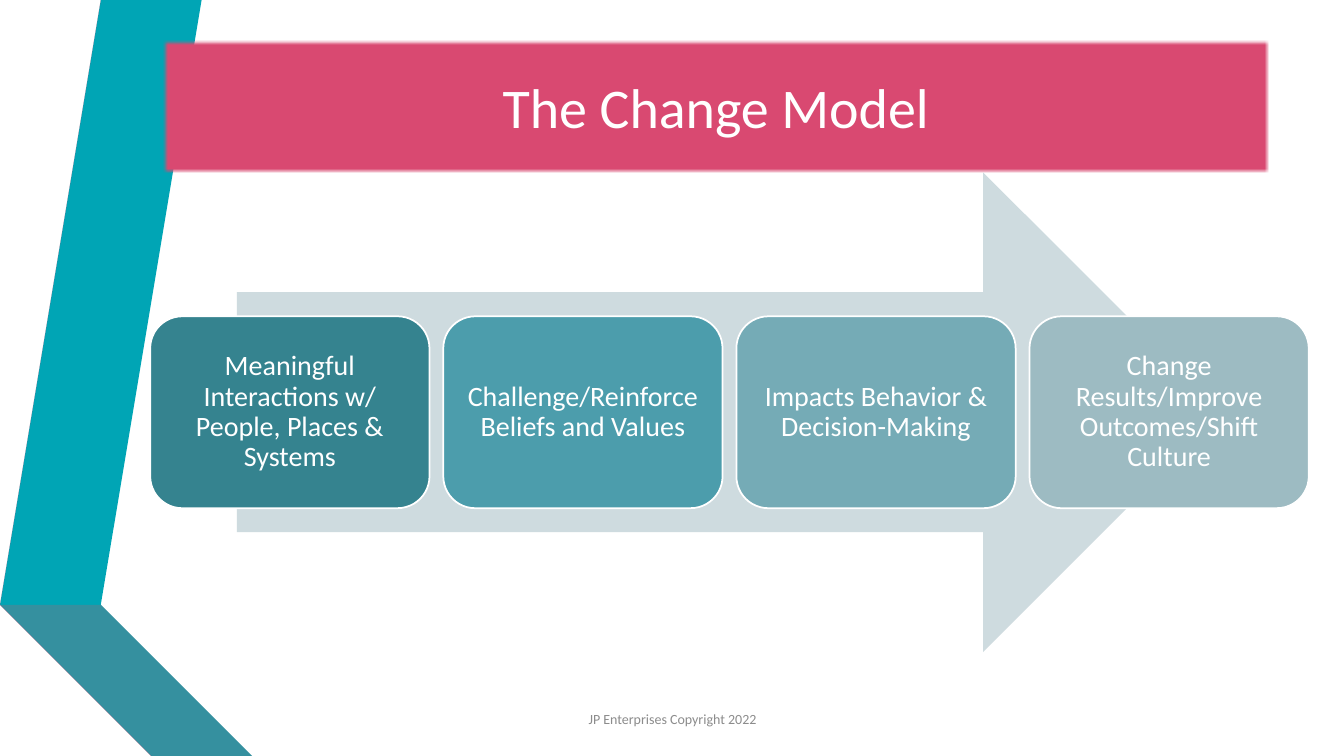
from dataclasses import dataclass

from lxml import etree
from pptx import Presentation
from pptx import util as u
from pptx.dml.color import RGBColor
from pptx.enum import shapes, text
from pptx.oxml import ns

TITLE = "The Change Model"
FOOTER = "JP Enterprises Copyright 2022"
STEPS = [
    ("Meaningful Interactions w/ People, Places & Systems", "35838F"),
    ("Challenge/Reinforce Beliefs and Values", "4C9DAC"),
    ("Impacts Behavior & Decision-Making", "75ABB6"),
    ("Change Results/Improve Outcomes/Shift Culture", "9DBBC2"),
]
RIBBONS = [
    ("00A5B5", [(0.5, 5.78), (0.77, 5.83), (1.73, 0), (1.45, 0)]),
    ("F5416C", [(1.39, 0), (1.11, 0), (0.16, 5.73), (0.44, 5.77)]),
    ("35909F", [(0.5, 5.79), (2.14, 7.5), (2.83, 7.5), (0.77, 5.83), (0.5, 5.78)]),
    ("DB4871", [(2.02, 7.5), (0.48, 5.83), (0.43, 5.77), (0.16, 5.73), (1.51, 7.5)]),
]


@dataclass(frozen=True)
class Theme:
    font: str = "Calibri"
    white: str = "FFFFFF"
    banner: str = "D94971"
    arrow: str = "CEDBDF"
    footer: str = "8C8C8C"
    title_size: int = 40
    step_size: int = 20
    footer_size: int = 10


THEME = Theme()
WIDTH, HEIGHT = 13.33, 7.5
ARROW = (2.35, 1.71, 9.78, 4.76)
STEP_LEFT, STEP_WIDTH, STEP_PITCH = 1.49, 2.77, 2.907
STEP_HEIGHT = ARROW[3] * 0.4
STEP_TOP = ARROW[1] + (ARROW[3] - STEP_HEIGHT) / 2


def paint(shape, color, outline=None):
    shape.shadow.inherit = False
    shape.fill.solid()
    shape.fill.fore_color.rgb = RGBColor.from_string(color)
    if outline:
        shape.line.color.rgb = RGBColor.from_string(outline)
        shape.line.width = u.Pt(1.25)
    else:
        shape.line.fill.background()
    return shape


def add_block(page, kind, frame, color, outline=None):
    shape = page.shapes.add_shape(kind, *map(u.Inches, frame))
    return paint(shape, color, outline)


def write(shape, words, size, color):
    frame = shape.text_frame
    frame.word_wrap = True
    frame.vertical_anchor = text.MSO_ANCHOR.MIDDLE
    para = frame.paragraphs[0]
    para.alignment = text.PP_ALIGN.CENTER
    span = para.add_run()
    span.text = words
    span.font.name = THEME.font
    span.font.size = u.Pt(size)
    span.font.color.rgb = RGBColor.from_string(color)
    return frame


def add_ribbon(page, color, points):
    start, *rest = points
    builder = page.shapes.build_freeform(*start, scale=u.Inches(1))
    builder.add_line_segments(rest, close=True)
    paint(builder.convert_to_shape(), color)


def add_banner(page):
    frame = (1.62, 0.4, 10.96, 1.31)
    banner = add_block(page, shapes.MSO_SHAPE.RECTANGLE, frame, THEME.banner)
    effects = banner._element.spPr.find(ns.qn("a:effectLst"))
    etree.SubElement(effects, ns.qn("a:softEdge"), rad=str(u.Pt(2)))
    write(banner, TITLE, THEME.title_size, THEME.white)


def add_step(page, column, words, color):
    frame = (STEP_LEFT + column * STEP_PITCH, STEP_TOP, STEP_WIDTH, STEP_HEIGHT)
    box = add_block(page, shapes.MSO_SHAPE.ROUNDED_RECTANGLE, frame, color, THEME.white)
    body = write(box, words, THEME.step_size, THEME.white)
    body.margin_left = body.margin_right = u.Inches(0.08)
    body.margin_top = body.margin_bottom = u.Inches(0.08)
    body.paragraphs[0].line_spacing = 0.9


def main():
    deck = Presentation()
    deck.slide_width, deck.slide_height = u.Inches(WIDTH), u.Inches(HEIGHT)
    page = deck.slides.add_slide(deck.slide_layouts[6])
    for color, points in RIBBONS:
        add_ribbon(page, color, points)
    add_banner(page)
    add_block(page, shapes.MSO_SHAPE.RIGHT_ARROW, ARROW, THEME.arrow)
    for column, (words, color) in enumerate(STEPS):
        add_step(page, column, words, color)
    footer = page.shapes.add_textbox(*map(u.Inches, (5.17, 6.93, 3, 0.4)))
    write(footer, FOOTER, THEME.footer_size, THEME.footer)
    footer.text_frame.paragraphs[0].space_after = u.Pt(6)
    deck.save("out.pptx")


if __name__ == "__main__":
    main()
